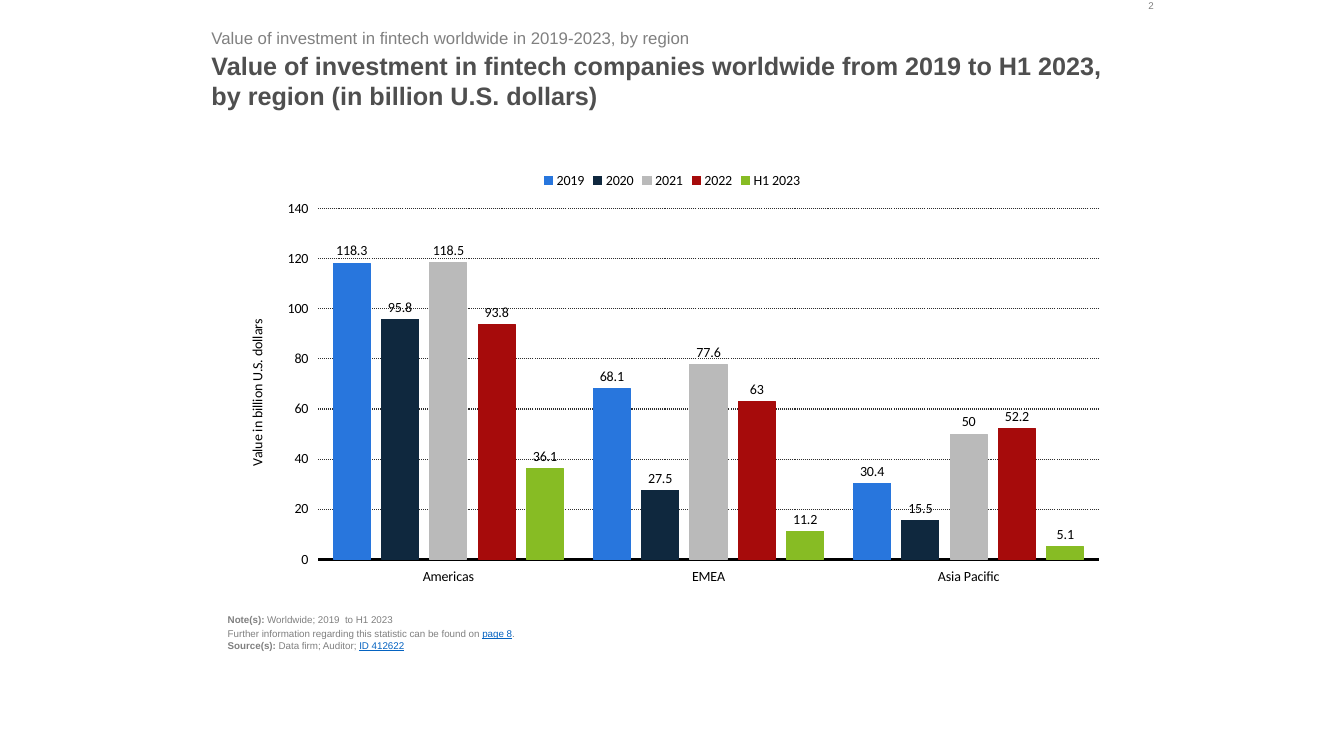
from pptx import Presentation
from pptx.chart.data import CategoryChartData
from pptx.dml.color import RGBColor
from pptx.enum.chart import (XL_CHART_TYPE, XL_LABEL_POSITION, XL_LEGEND_POSITION,
                             XL_TICK_LABEL_POSITION, XL_TICK_MARK)
from pptx.enum.dml import MSO_LINE
from pptx.enum.text import MSO_ANCHOR, PP_ALIGN
from pptx.util import Cm, Pt

COLUMN_CLUSTERED = XL_CHART_TYPE.COLUMN_CLUSTERED
OUTSIDE_END = XL_LABEL_POSITION.OUTSIDE_END
LEGEND_TOP = XL_LEGEND_POSITION.TOP
LABELS_LOW = XL_TICK_LABEL_POSITION.LOW
NO_TICK = XL_TICK_MARK.NONE
DOTTED = MSO_LINE.ROUND_DOT
TOP, BOTTOM = MSO_ANCHOR.TOP, MSO_ANCHOR.BOTTOM
LEFT, RIGHT = PP_ALIGN.LEFT, PP_ALIGN.RIGHT

BLACK = RGBColor(0x00, 0x00, 0x00)
TITLE_GRAY = RGBColor(0x4F, 0x4F, 0x4F)
TEXT_GRAY = RGBColor(0x80, 0x80, 0x80)
LINK_BLUE = RGBColor(0x05, 0x63, 0xC1)
GRID_GRAY = RGBColor(0x2F, 0x2F, 0x2F)

TITLE = {"name": "Arial", "size": Pt(18), "bold": True, "color": TITLE_GRAY}
SUBTITLE = {"name": "Arial", "size": Pt(12), "color": TEXT_GRAY}
SMALL = {"name": "Arial", "size": Pt(7), "color": TEXT_GRAY}
SMALL_BOLD = SMALL | {"bold": True}
LINK = SMALL | {"color": LINK_BLUE, "underline": True}
CHART_TEXT = {"name": "Calibri", "size": Pt(10), "bold": False, "color": BLACK}

REGIONS = ["Americas", "EMEA", "Asia Pacific"]
INVESTMENTS = [
    ("2019", RGBColor(0x28, 0x76, 0xDD), [118.3, 68.1, 30.4]),
    ("2020", RGBColor(0x0F, 0x28, 0x3E), [95.8, 27.5, 15.5]),
    ("2021", RGBColor(0xBA, 0xBA, 0xBA), [118.5, 77.6, 50]),
    ("2022", RGBColor(0xA6, 0x0B, 0x0B), [93.8, 63, 52.2]),
    ("H1 2023", RGBColor(0x87, 0xBC, 0x24), [36.1, 11.2, 5.1]),
]
NOTES = [
    [("Note(s):", SMALL_BOLD), (" Worldwide; 2019  to H1 2023", SMALL)],
    [("Further information regarding this statistic can be found on ", SMALL),
     ("page 8", LINK), (".", SMALL)],
    [("Source(s): ", SMALL_BOLD), ("Data firm; Auditor; ", SMALL), ("ID 412622", LINK)],
]


def set_format(target, values):
    for name, value in values.items():
        if name == "color":
            target.color.rgb = value
        else:
            setattr(target, name, value)


def add_text(slide, box, paragraphs, anchor=TOP, alignment=LEFT):
    frame = slide.shapes.add_textbox(*box).text_frame
    set_format(frame, {"word_wrap": True, "vertical_anchor": anchor,
                       "margin_left": 0, "margin_right": 0,
                       "margin_top": 0, "margin_bottom": 0})
    for index, runs in enumerate(paragraphs):
        paragraph = frame.paragraphs[0] if index == 0 else frame.add_paragraph()
        paragraph.alignment = alignment
        if index == 0:
            paragraph.space_after = Pt(1.4)
        for text, values in runs:
            run = paragraph.add_run()
            run.text = text
            set_format(run.font, values)


def add_heading(slide, left, top, width):
    add_text(slide, (left, top, width, Cm(0.71)),
             [[("Value of investment in fintech worldwide in 2019-2023, by region", SUBTITLE)]])
    add_text(slide, (left, top + Cm(0.56), width, Cm(2.39)),
             [[("Value of investment in fintech companies worldwide from 2019 to H1 2023, "
                "by region (in billion U.S. dollars)", TITLE)]])


def format_axes(chart):
    category_axis, value_axis = chart.category_axis, chart.value_axis
    for axis in (category_axis, value_axis):
        set_format(axis, {"major_tick_mark": NO_TICK, "minor_tick_mark": NO_TICK,
                          "tick_label_position": LABELS_LOW})
        set_format(axis.tick_labels.font, CHART_TEXT)
    set_format(category_axis.format.line, {"color": BLACK, "width": Pt(2)})
    set_format(value_axis, {"minimum_scale": 0, "has_major_gridlines": True})
    set_format(value_axis.tick_labels,
               {"number_format": "#,##0", "number_format_is_linked": False})
    value_axis.format.line.fill.background()
    set_format(value_axis.major_gridlines.format.line,
               {"color": GRID_GRAY, "width": Pt(0.75), "dash_style": DOTTED})
    title = value_axis.axis_title.text_frame
    title.text = "Value in billion U.S. dollars"
    set_format(title.paragraphs[0].runs[0].font, CHART_TEXT)


def add_investment_chart(slide, box):
    data = CategoryChartData()
    data.categories = REGIONS
    for name, _, values in INVESTMENTS:
        data.add_series(name, values)
    chart = slide.shapes.add_chart(COLUMN_CLUSTERED, *box, data).chart
    set_format(chart, {"has_title": False, "has_legend": True})
    set_format(chart.font, CHART_TEXT)
    set_format(chart.legend, {"position": LEGEND_TOP, "include_in_layout": False})
    set_format(chart.legend.font, CHART_TEXT)
    format_axes(chart)
    plot = chart.plots[0]
    set_format(plot, {"gap_width": 80, "overlap": -30, "vary_by_categories": False})
    for series, (_, color, _) in zip(plot.series, INVESTMENTS):
        series.invert_if_negative = False
        series.format.fill.solid()
        series.format.fill.fore_color.rgb = color
        set_format(series.format.line, {"color": color, "width": Pt(0.75)})
        set_format(series.data_labels, {"show_value": True, "position": OUTSIDE_END})
        set_format(series.data_labels.font, CHART_TEXT)


def build_slide(presentation):
    slide = presentation.slides.add_slide(presentation.slide_layouts[6])
    add_heading(slide, Cm(5.33), Cm(0.71), Cm(22.81))
    add_investment_chart(slide, (Cm(5.74), Cm(4.06), Cm(22.4), Cm(10.9)))
    add_text(slide, (Cm(5.74), Cm(14.94), Cm(22.4), Cm(1.47)), NOTES, anchor=BOTTOM)
    add_text(slide, (Cm(27.86), 0, Cm(1.22), Cm(0.56)), [[("2", SMALL)]], alignment=RIGHT)


def main():
    presentation = Presentation()
    set_format(presentation, {"slide_width": Cm(33.87), "slide_height": Cm(19.05)})
    build_slide(presentation)
    presentation.save("out.pptx")


if __name__ == "__main__":
    main()
